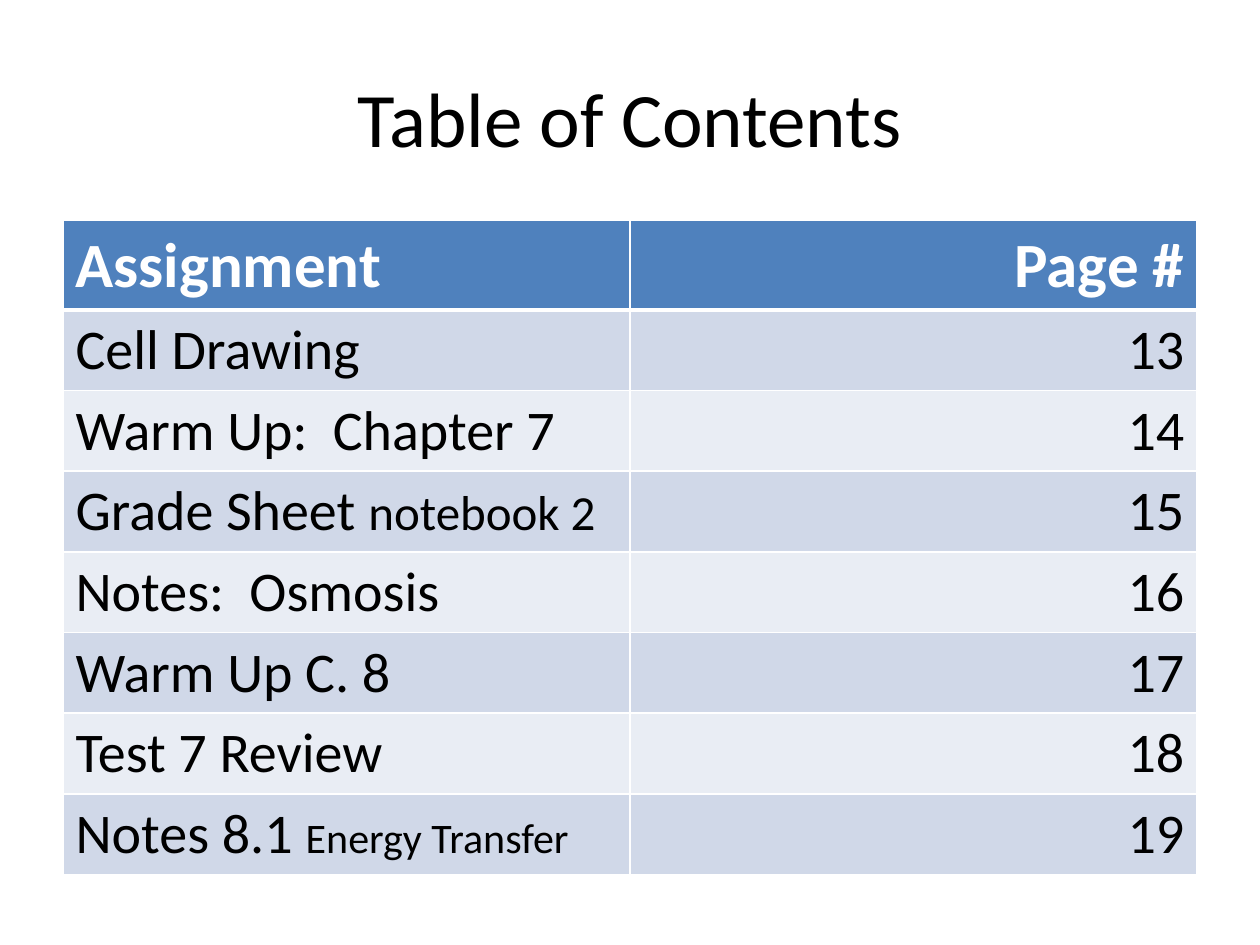
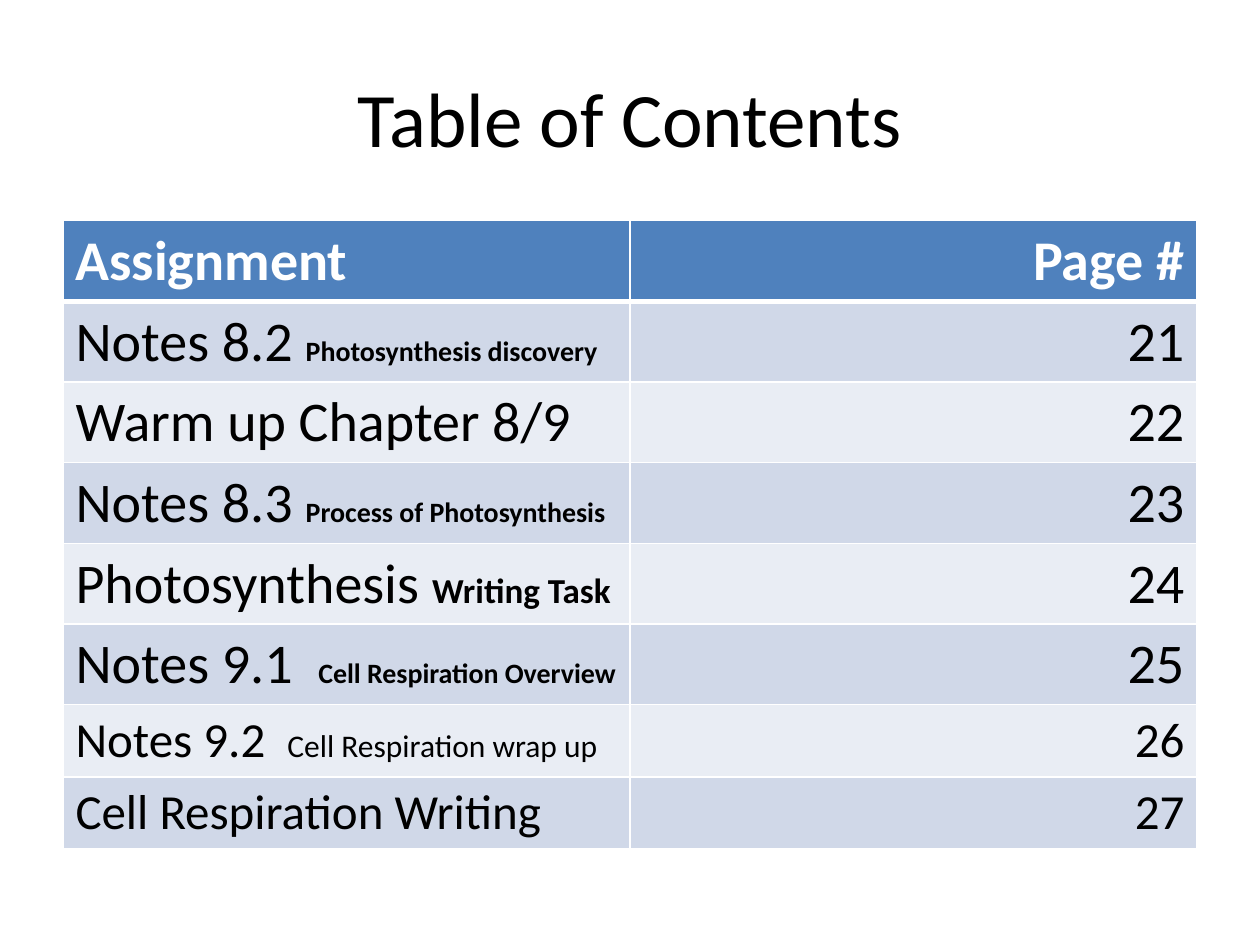
from lxml.etree import SubElement
from pptx import Presentation
from pptx.dml.color import RGBColor
from pptx.enum.text import MSO_ANCHOR, PP_ALIGN
from pptx.oxml.ns import qn
from pptx.util import Cm, Pt

TITLE = "Table of Contents"
HEADINGS = ("Assignment", "Page #")

# Each row: size, page number, assignment, then optional detail, detail size, detail bold
CONTENTS = [
    {
        "heading_size": 36,
        "rows": [
            (32, 13, "Cell Drawing"),
            (32, 14, "Warm Up:  Chapter 7"),
            (32, 15, "Grade Sheet ", "notebook 2", 28, False),
            (32, 16, "Notes:  Osmosis"),
            (32, 17, "Warm Up C. 8"),
            (32, 18, "Test 7 Review"),
            (32, 19, "Notes 8.1 ", "Energy Transfer", 24, False),
        ],
    },
    {
        "heading_size": 32,
        "rows": [
            (32, 21, "Notes 8.2 ", "Photosynthesis discovery", 16, True),
            (32, 22, "Warm up Chapter 8/9"),
            (32, 23, "Notes 8.3 ", "Process of Photosynthesis", 16, True),
            (32, 24, "Photosynthesis ", "Writing Task", 20, True),
            (32, 25, "Notes 9.1  ", "Cell Respiration Overview", 16, True),
            (28, 26, "Notes 9.2  ", "Cell Respiration wrap up", 18, False),
            (28, 27, "Cell Respiration Writing"),
        ],
    },
]

FONT = "Calibri"
BLACK, WHITE = "000000", "FFFFFF"
HEADER_FILL = "4F81BD"
BAND_FILLS = ("E9EDF4", "D0D8E8")

MARGIN, WIDTH = Cm(1.27), Cm(22.86)
TITLE_TOP, TITLE_HEIGHT = Cm(0.76), Cm(3.18)
TABLE_TOP = Cm(4.45)


def color(value):
    return RGBColor.from_string(value)


def row_height(size):
    return Cm(0.25 + 0.043 * size)


def add_run(para, text, size, shade=BLACK, bold=False):
    span = para.add_run()
    span.text = text
    span.font.name = FONT
    span.font.size = Pt(size)
    span.font.bold = bold
    span.font.color.rgb = color(shade)


def add_title(page):
    box = page.shapes.add_textbox(MARGIN, TITLE_TOP, WIDTH, TITLE_HEIGHT)
    frame = box.text_frame
    frame.word_wrap = True
    frame.vertical_anchor = MSO_ANCHOR.MIDDLE
    para = frame.paragraphs[0]
    para.alignment = PP_ALIGN.CENTER
    add_run(para, TITLE, 44)


def set_borders(cell, top, bottom):
    properties = cell._tc.get_or_add_tcPr()
    for side, width in (("L", 1), ("R", 1), ("T", top), ("B", bottom)):
        line = SubElement(properties, qn(f"a:ln{side}"), w=str(Pt(width)))
        fill = SubElement(line, qn("a:solidFill"))
        SubElement(fill, qn("a:srgbClr"), val=WHITE)


def style_cell(cell, index, column):
    set_borders(cell, 3 if index == 1 else 1, 3 if index == 0 else 1)
    cell.fill.solid()
    cell.fill.fore_color.rgb = color(BAND_FILLS[index % 2] if index else HEADER_FILL)
    para = cell.text_frame.paragraphs[0]
    para.alignment = PP_ALIGN.RIGHT if column else PP_ALIGN.LEFT
    return para


def add_contents(page, heading_size, rows):
    sizes = [heading_size] + [row[0] for row in rows]
    heights = [row_height(size) for size in sizes]
    table = page.shapes.add_table(
        len(sizes), 2, MARGIN, TABLE_TOP, WIDTH, sum(heights)
    ).table
    table.first_row = table.horz_banding = False
    for index, height in enumerate(heights):
        table.rows[index].height = height
        name, number = [
            style_cell(table.cell(index, column), index, column) for column in range(2)
        ]
        if index == 0:
            for para, heading in zip((name, number), HEADINGS):
                add_run(para, heading, heading_size, WHITE, True)
            continue
        size, page_number, assignment, *detail = rows[index - 1]
        add_run(name, assignment, size)
        if detail:
            text, detail_size, bold = detail
            add_run(name, text, detail_size, bold=bold)
        add_run(number, str(page_number), size)


def main():
    deck = Presentation()
    deck.slide_width, deck.slide_height = Cm(25.4), Cm(19.05)
    for contents in CONTENTS:
        page = deck.slides.add_slide(deck.slide_layouts[6])
        add_title(page)
        add_contents(page, **contents)
    deck.save("out.pptx")


if __name__ == "__main__":
    main()
